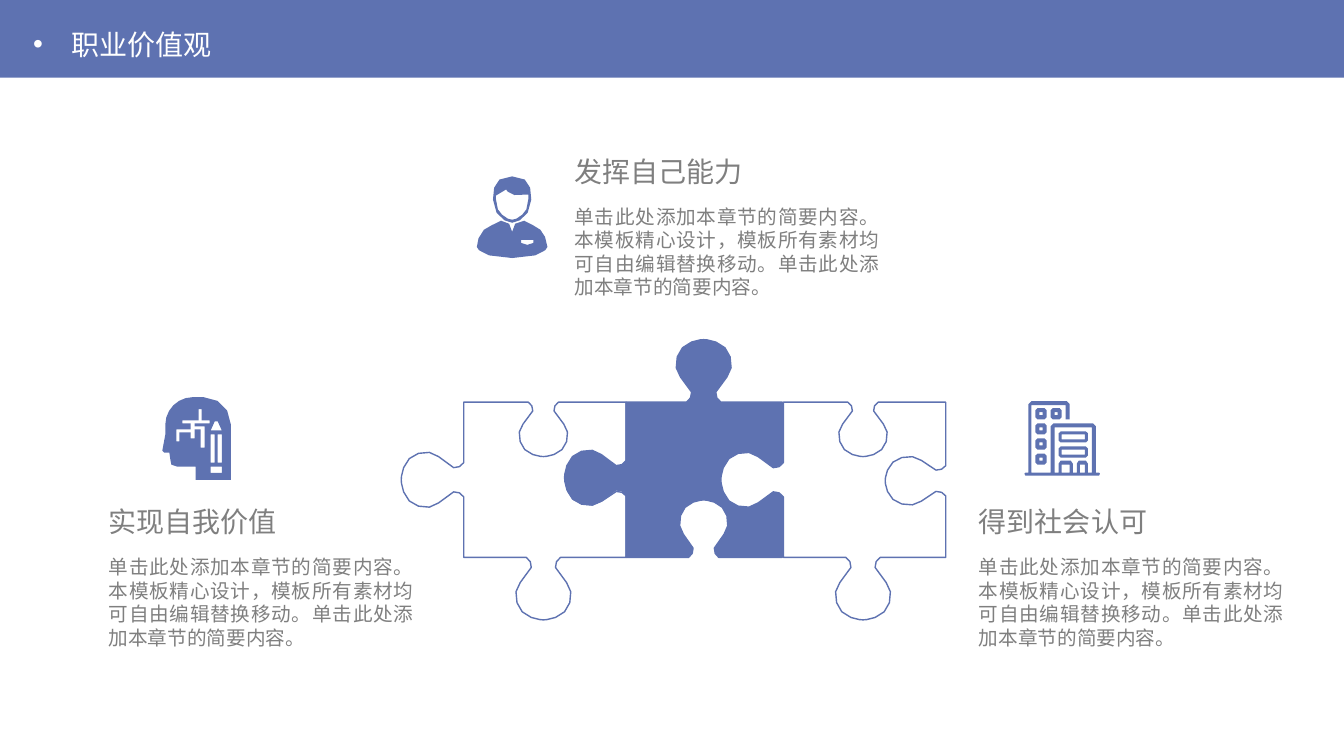
from dataclasses import dataclass
from math import ceil, dist

from lxml.etree import SubElement
from pptx import Presentation
from pptx.dml.color import RGBColor
from pptx.enum.shapes import MSO_SHAPE
from pptx.enum.text import MSO_ANCHOR, PP_ALIGN
from pptx.oxml.ns import qn
from pptx.util import Inches, Pt


@dataclass(frozen=True)
class Theme:
    blue: RGBColor = RGBColor(0x5E, 0x72, 0xB1)
    white: RGBColor = RGBColor(0xFF, 0xFF, 0xFF)
    grey: RGBColor = RGBColor(0x7F, 0x7F, 0x7F)
    font: str = "Noto Sans CJK SC"
    head: int = 20
    body: int = 14
    line: int = 1


# One half of a puzzle knob as cubic curves: (along the edge, away from it)
KNOB = [
    [(-.17, 0), (-.15, .03), (-.1, .05), (-.12, .1)],
    [(-.12, .1), (-.15, .15), (-.2, .2), (-.23, .25)],
    [(-.23, .25), (-.3, .32), (-.28, .47), (-.21, .54)],
    [(-.21, .54), (-.13, .62), (0, .62), (0, .62)],
]
DEPTH = .62


def curve(a, b, c, d):
    """Points on a cubic curve, without its first; longer curves get more."""
    steps = max(1, min(3, ceil(dist(a, d) / .1)))
    for i in range(1, steps + 1):
        t = i / steps
        s = 1 - t
        yield tuple(s**3 * p + 3 * s * s * t * q + 3 * s * t * t * r + t**3 * u
                    for p, q, r, u in zip(a, b, c, d))


def trace(*steps):
    """Turn points (2 numbers) and curves (6 numbers) into one outline."""
    pts = []
    for step in steps:
        if len(step) == 2:
            pts.append(step)
        else:
            pts += curve(pts[-1], step[:2], step[2:4], step[4:])
    return pts


def box(x, y, w, h, cut=0.0):
    """Outline of a rectangle, its corners cut off by the given length."""
    e, f = x + w, y + h
    if not cut:
        return [(x, y), (e, y), (e, f), (x, f)]
    return [(x + cut, y), (e - cut, y), (e, y + cut), (e, f - cut),
            (e - cut, f), (x + cut, f), (x, f - cut), (x, y + cut)]


def frame(x, y, w, h, rim):
    """Soft-cornered rectangle with a hole, as two outlines."""
    return [box(x, y, w, h, .02),
            box(x + rim, y + rim, w - 2 * rim, h - 2 * rim)]


def knob(depth, wide):
    """Full knob profile; a negative depth makes a socket."""
    left = [KNOB[0][0]] + [p for part in KNOB for p in curve(*part)]
    full = left + [(-u, v) for u, v in left[-2::-1]]
    return [(u * wide, v * depth / DEPTH) for u, v in full]


def jigsaw(x, y, w, h, sides):
    """Clockwise from the top left; sides give (centre, depth, width scale)."""
    ways = [(1, 0), (0, 1), (-1, 0), (0, -1)]
    pts = []
    for (dx, dy), size, (mid, depth, wide) in zip(ways, (w, h, w, h), sides):
        pts.append((x, y))
        pts += [(x + dx * (mid + u) + dy * v, y + dy * (mid + u) - dx * v)
                for u, v in knob(depth, wide)]
        x, y = x + dx * size, y + dy * size
    return pts


class Page:
    def __init__(self, deck, theme):
        self.theme = theme
        self.slide = deck.slides.add_slide(deck.slide_layouts[6])
        self.shapes = self.slide.shapes

    def paint(self, shape, fill, line=None):
        shape.shadow.inherit = False
        shape.fill.solid()
        shape.fill.fore_color.rgb = fill
        if line is None:
            shape.line.fill.background()
        else:
            shape.line.color.rgb = line
            shape.line.width = Pt(self.theme.line)

    def band(self, x, y, w, h):
        bar = self.shapes.add_shape(MSO_SHAPE.RECTANGLE, Inches(x), Inches(y),
                                    Inches(w), Inches(h))
        self.paint(bar, self.theme.blue)

    def free(self, loops, fill, line=None, home=None):
        """Draw outlines as one shape; inner outlines become holes."""
        loops = [[(Inches(x), Inches(y)) for x, y in loop] for loop in loops]
        pen = (home or self.shapes).build_freeform(*loops[0][0])
        for i, loop in enumerate(loops):
            if i:
                pen.move_to(*loop[0])
            pen.add_line_segments(loop[1:], close=True)
        self.paint(pen.convert_to_shape(), fill, line)

    def text(self, words, x, y, w, h, size, color, align=PP_ALIGN.LEFT):
        area = self.shapes.add_textbox(Inches(x), Inches(y), Inches(w), Inches(h))
        area.text_frame.word_wrap = True
        area.text_frame.vertical_anchor = MSO_ANCHOR.TOP
        area.text_frame.text = words
        para = area.text_frame.paragraphs[0]
        para.alignment = align
        font = para.runs[0].font
        font.size, font.name, font.color.rgb = Pt(size), self.theme.font, color
        SubElement(font._element, qn("a:ea"), typeface=self.theme.font)
        return para

    def title(self, words):
        para = self.text(words, .23, .22, 4.01, .44, self.theme.head, self.theme.white)
        props = para._p.get_or_add_pPr()
        props.set("marL", str(Inches(.38)))
        props.set("indent", str(-Inches(.38)))
        SubElement(props, qn("a:buFont"), typeface="Arial")
        SubElement(props, qn("a:buChar"), char="•")

    def note(self, head, body, x, y):
        look = self.theme
        self.text(head, x, y, 3.22, .45, look.head, look.grey)
        self.text(body, x, y + .5, 3.22, 1.25, look.body, look.grey, PP_ALIGN.JUSTIFY)

    def puzzle(self):
        look = self.theme
        outer = [(.79, -.54, .88), (.78, -.6, .88), (.82, DEPTH, 1), (.77, DEPTH, 1)]
        inner = [(.77, DEPTH, 1), (.76, -.54, .88), (.78, -.57, .88), (.79, .61, 1)]
        home = self.shapes.add_group_shape().shapes
        for x, w, sides, fill in ((4.6, 1.61, outer, look.white),
                                  (6.21, 1.55, inner, look.blue),
                                  (7.77, 1.61, outer, look.white)):
            self.free([jigsaw(x, 3.99, w, 1.54, sides)], fill, look.blue, home)


def tower():
    """Two office buildings."""
    loops = [[(10.23, 3.98), (10.58, 3.98), (10.61, 4.01), (10.61, 4.16), (10.57, 4.16),
              (10.57, 4.02), (10.23, 4.02), (10.23, 4.69), (10.42, 4.69), (10.42, 4.23),
              (10.45, 4.2), (10.84, 4.2), (10.87, 4.23), (10.87, 4.69), (10.9, 4.69),
              (10.91, 4.7), (10.9, 4.72), (10.17, 4.72), (10.16, 4.7), (10.17, 4.69),
              (10.2, 4.69), (10.2, 4.01)],
             box(10.46, 4.24, .37, .45)]
    for x, y in [(10.27, 4.05 + .15 * i) for i in range(4)] + [(10.42, 4.05)]:
        loops += frame(x, y, .11, .11, .04)
    for y in (4.28, 4.43):
        loops += frame(10.5, y, .29, .11, .03)
    for x, w in ((10.5, .14), (10.68, .11)):
        e = x + w
        loops += [[(x, 4.69), (x, 4.6), (x + .02, 4.57), (e - .02, 4.57), (e, 4.6),
                   (e, 4.69)], box(x + .03, 4.61, w - .06, .08)]
    return loops


def mind():
    """Head in profile with a diagram and a pencil cut out."""
    return [
        trace((2.02, 3.94), (1.91, 3.94), (1.84, 3.94, 1.77, 3.97, 1.72, 4.02),
              (1.67, 4.07, 1.64, 4.14, 1.64, 4.21), (1.64, 4.31), (1.61, 4.47),
              (1.63, 4.49), (1.68, 4.49), (1.69, 4.56), (1.7, 4.61), (1.76, 4.63),
              (1.94, 4.63), (1.94, 4.76), (2.29, 4.76), (2.29, 4.21),
              (2.29, 4.06, 2.17, 3.94, 2.02, 3.94)),
        [(2.09, 4.27), (2.13, 4.18), (2.16, 4.18), (2.2, 4.27)],
        box(2.09, 4.31, .04, .28), box(2.16, 4.31, .04, .28), box(2.09, 4.63, .11, .06),
        [(2.08, 4.2), (1.93, 4.2), (1.93, 4.23), (2.03, 4.23), (2.03, 4.44), (1.99, 4.44),
         (1.99, 4.26), (1.93, 4.26), (1.93, 4.35), (1.89, 4.35), (1.89, 4.29),
         (1.78, 4.29), (1.78, 4.38), (1.75, 4.38), (1.75, 4.26), (1.89, 4.26),
         (1.89, 4.2), (1.81, 4.2), (1.81, 4.17), (1.97, 4.17), (1.97, 4.06), (2, 4.06),
         (2, 4.17), (2.08, 4.17)]]


def staff():
    """Bust of a worker with a badge."""
    return [
        trace((4.97, 2.19), (5.05, 2.22), (5.08, 2.3), (5.11, 2.22), (5.2, 2.19),
              (5.24, 2.21, 5.34, 2.26, 5.36, 2.28), (5.4, 2.31, 5.42, 2.38, 5.43, 2.45),
              (5.43, 2.46, 5.39, 2.56, 5.08, 2.56), (4.77, 2.56, 4.73, 2.46, 4.73, 2.45),
              (4.73, 2.42, 4.75, 2.31, 4.8, 2.28), (4.83, 2.26, 4.92, 2.21, 4.97, 2.19)),
        [(5.17, 2.38), (5.17, 2.41), (5.23, 2.43), (5.29, 2.41), (5.29, 2.38)],
        trace((5.08, 1.75), (5.25, 1.75, 5.27, 1.85, 5.27, 1.98),
              (5.27, 2.14, 5.14, 2.21, 5.08, 2.21), (5.02, 2.21, 4.89, 2.14, 4.89, 1.98),
              (4.89, 1.85, 4.91, 1.75, 5.08, 1.75)),
        trace((5.02, 1.88), (4.92, 1.94), (4.92, 1.98),
              (4.92, 2.06, 4.95, 2.11, 4.98, 2.13), (5.02, 2.17, 5.06, 2.18, 5.08, 2.18),
              (5.1, 2.18, 5.14, 2.17, 5.18, 2.13), (5.21, 2.11, 5.24, 2.06, 5.24, 1.98),
              (5.24, 1.93), (5.06, 1.97, 5.02, 1.88, 5.02, 1.88))]


def main():
    deck = Presentation()
    deck.slide_width, deck.slide_height = Inches(13.33), Inches(7.5)
    page = Page(deck, Theme())
    page.band(0, 0, 13.33, .77)
    page.title("职业价值观")
    page.puzzle()
    for icon in (tower, mind, staff):
        page.free(icon(), page.theme.blue)
    body = "单击此处添加本章节的简要内容。本模板精心设计，模板所有素材均可自由编辑替换移动。单击此处添加本章节的简要内容。"
    for head, x, y in (("发挥自己能力", 5.6, 1.48), ("实现自我价值", .98, 4.96),
                       ("得到社会认可", 9.61, 4.96)):
        page.note(head, body, x, y)
    deck.save("out.pptx")


if __name__ == "__main__":
    main()
